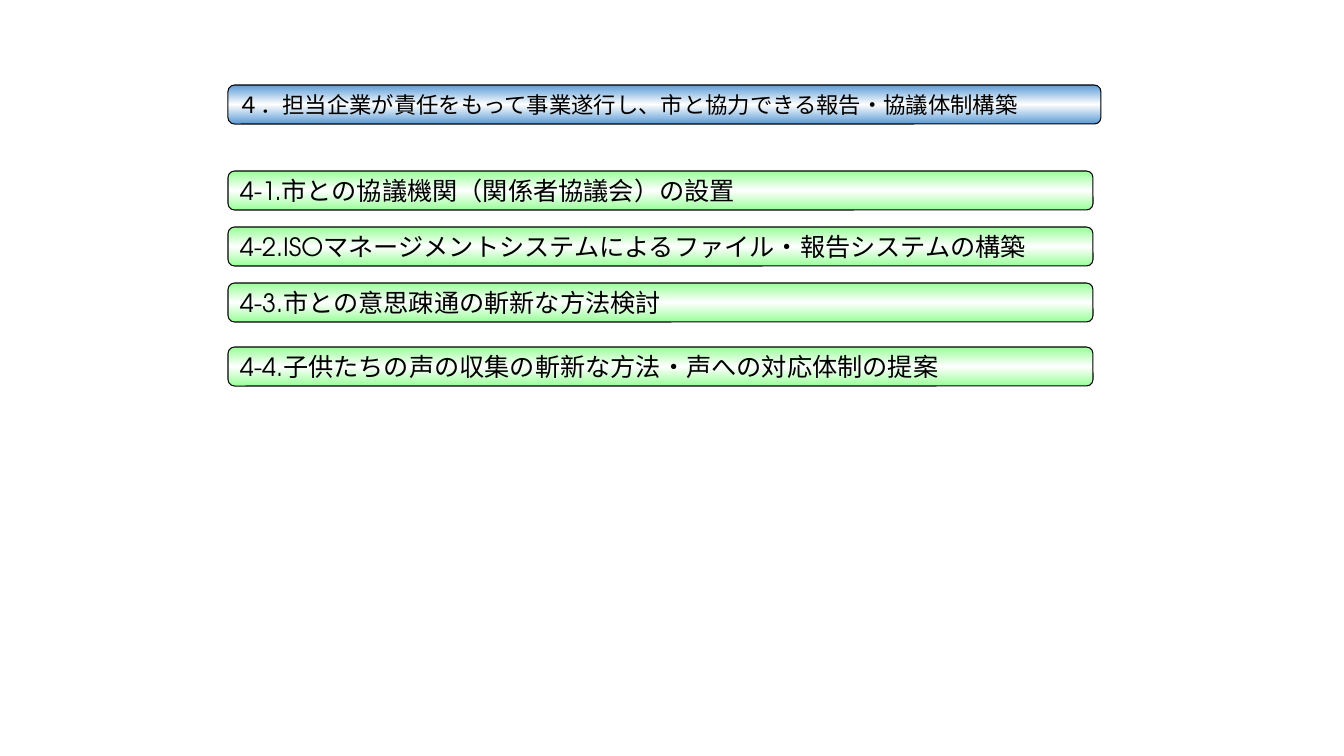
"""Build a slide with one heading bar and four topic bars."""
from copy import deepcopy

from pptx import Presentation
from pptx.dml.color import RGBColor
from pptx.enum.shapes import MSO_SHAPE as Shape
from pptx.enum.text import MSO_ANCHOR as Anchor, MSO_AUTO_SIZE as Fit, PP_ALIGN as Align
from pptx.util import Pt

PX = 914400 / 100.8
FONT = "TeX Gyre Adventor"
BLUE = RGBColor(0x5B, 0x9B, 0xD5)
GREEN = RGBColor(0x99, 0xFF, 0x99)
WHITE = RGBColor(0xFF, 0xFF, 0xFF)
BLACK = RGBColor(0, 0, 0)

HEAD = "４．担当企業が責任をもって事業遂行し、市と協力できる報告・協議体制構築"
TOPICS = [
    (0, "4-1.市との協議機関（関係者協議会）の設置"),
    (56, "4-2.ISOマネージメントシステムによるファイル・報告システムの構築"),
    (112, "4-3.市との意思疎通の斬新な方法検討"),
    (176, "4-4.子供たちの声の収集の斬新な方法・声への対応体制の提案"),
]


def px(n):
    """Turn pixels into EMU."""
    return round(n * PX)


def write(shape, text, size=18, color=BLACK):
    """Put one left-aligned line of text into a shape."""
    frame = shape.text_frame
    frame.text = text
    frame.word_wrap = True
    frame.auto_size = Fit.NONE
    frame.vertical_anchor = Anchor.MIDDLE
    frame.margin_left = frame.margin_right = px(10)
    frame.margin_top = frame.margin_bottom = px(5)
    line = frame.paragraphs[0]
    line.alignment = Align.LEFT
    font = line.runs[0].font
    font.name, font.size, font.color.rgb = FONT, Pt(size), color


def shade(fill, shape, edge):
    """Fill a shape with a vertical gradient that is white halfway."""
    fill.gradient()
    fill.gradient_angle = 90
    first = shape.element.xpath(".//a:gs")[0]
    first.addnext(deepcopy(first))
    marks = [(0, edge), (0.5, WHITE), (1, edge)]
    for stop, (place, color) in zip(fill.gradient_stops, marks):
        stop.position = place
        stop.color.rgb = color


def bar(slide, box, edge):
    """Draw a rounded gradient bar in the given box."""
    shape = slide.shapes.add_shape(Shape.ROUNDED_RECTANGLE, *map(px, box))
    shape.adjustments[0] = 0.167
    shape.shadow.inherit = False
    shade(shape.fill, shape, edge)
    shape.line.color.rgb = BLACK
    shape.line.width = Pt(0.75)
    return shape


def header(slide, box):
    """Place the heading bar with the slide title on it."""
    back = bar(slide, box, BLUE)
    title = slide.shapes.title
    title.left, title.top, title.width, title.height = map(px, box)
    write(title, HEAD, size=16)
    title.element.addprevious(back.element)


def topics(slide, box):
    """Stack the topic bars down from the top of the box."""
    left, top, width, height = box
    for drop, text in TOPICS:
        write(bar(slide, (left, top + drop, width, height), GREEN), text)


def main():
    """Build and save the slide."""
    deck = Presentation()
    deck.slide_width, deck.slide_height = px(1344), px(756)
    slide = deck.slides.add_slide(deck.slide_layouts[5])
    header(slide, (228, 85, 873, 39))
    topics(slide, (228, 171, 865, 39))
    deck.save("out.pptx")


if __name__ == "__main__":
    main()
